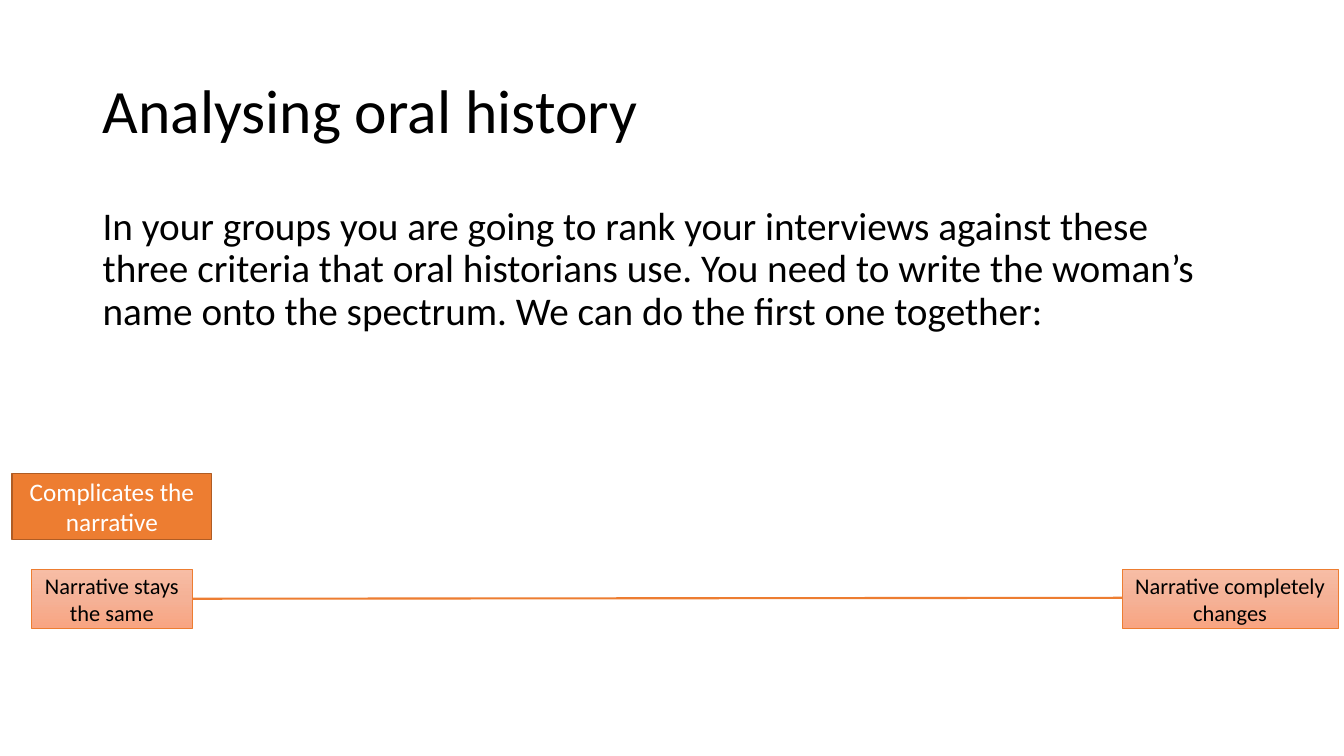
from copy import deepcopy

from lxml import etree
from pptx import Presentation
from pptx.dml.color import RGBColor
from pptx.enum.shapes import MSO_CONNECTOR, MSO_SHAPE
from pptx.enum.text import MSO_ANCHOR, PP_ALIGN
from pptx.oxml.ns import qn
from pptx.util import Inches, Pt

RECTANGLE = MSO_SHAPE.RECTANGLE
STRAIGHT = MSO_CONNECTOR.STRAIGHT
TOP, MIDDLE = MSO_ANCHOR.TOP, MSO_ANCHOR.MIDDLE
LEFT, CENTER = PP_ALIGN.LEFT, PP_ALIGN.CENTER

BLACK = RGBColor(0x00, 0x00, 0x00)
WHITE = RGBColor(0xFF, 0xFF, 0xFF)
ORANGE = RGBColor(0xED, 0x7D, 0x31)
DARK_ORANGE = RGBColor(0xAF, 0x5C, 0x24)
PEACH_STOPS = [
    (0, RGBColor(0xF7, 0xBD, 0xA5)),
    (0.5, RGBColor(0xF5, 0xB1, 0x96)),
    (1, RGBColor(0xF8, 0xA5, 0x82)),
]


def write_text(box, text, size, color=BLACK, align=LEFT, anchor=MIDDLE,
               line_spacing=1.0, space_before=0):
    frame = box.text_frame
    frame.word_wrap = True
    frame.vertical_anchor = anchor
    para = frame.paragraphs[0]
    para.alignment = align
    para.line_spacing = line_spacing
    para.space_before = Pt(space_before)
    span = para.add_run()
    span.text = text
    span.font.name = "Calibri"
    span.font.size = Pt(size)
    span.font.color.rgb = color


deck = Presentation()
deck.slide_width = Inches(13.33)
deck.slide_height = Inches(7.5)
page = deck.slides.add_slide(deck.slide_layouts[6])

title = page.shapes.add_textbox(Inches(0.92), Inches(0.4), Inches(11.5), Inches(1.45))
write_text(title, "Analysing oral history", 44, line_spacing=0.9)

task = page.shapes.add_textbox(Inches(0.92), Inches(2), Inches(11.5), Inches(4.76))
write_text(
    task,
    "In your groups you are going to rank your interviews against these three "
    "criteria that oral historians use. You need to write the woman’s name onto "
    "the spectrum. We can do the first one together:",
    28, anchor=TOP, line_spacing=0.9, space_before=10,
)

spectrum = page.shapes.add_connector(
    STRAIGHT, Inches(1.91), Inches(5.95), Inches(11.69), Inches(5.93))
spectrum.line.color.rgb = ORANGE
spectrum.line.width = Pt(1.5)
etree.SubElement(spectrum._element.spPr, qn("a:effectLst"))

criterion = page.shapes.add_shape(
    RECTANGLE, Inches(0.12), Inches(4.7), Inches(1.98), Inches(0.65))
criterion.shadow.inherit = False
criterion.fill.solid()
criterion.fill.fore_color.rgb = ORANGE
criterion.line.color.rgb = DARK_ORANGE
criterion.line.width = Pt(1)
write_text(criterion, "Complicates the narrative", 18, color=WHITE, align=CENTER)

spectrum_ends = []
for text, left, width in [
    ("Narrative stays the same", 0.31, 1.6),
    ("Narrative completely changes", 11.13, 2.14),
]:
    box = page.shapes.add_shape(
        RECTANGLE, Inches(left), Inches(5.65), Inches(width), Inches(0.58))
    box.shadow.inherit = False
    box.fill.gradient()
    box.fill.gradient_angle = 270
    first_stop = box._element.xpath(".//a:gs")[0]
    first_stop.addnext(deepcopy(first_stop))
    for stop, (position, color) in zip(box.fill.gradient_stops, PEACH_STOPS):
        stop.position = position
        stop.color.rgb = color
    box.line.color.rgb = ORANGE
    box.line.width = Pt(0.5)
    write_text(box, text, 16, align=CENTER)
    spectrum_ends.append(box)

spectrum.begin_connect(spectrum_ends[0], 3)

deck.save("out.pptx")
